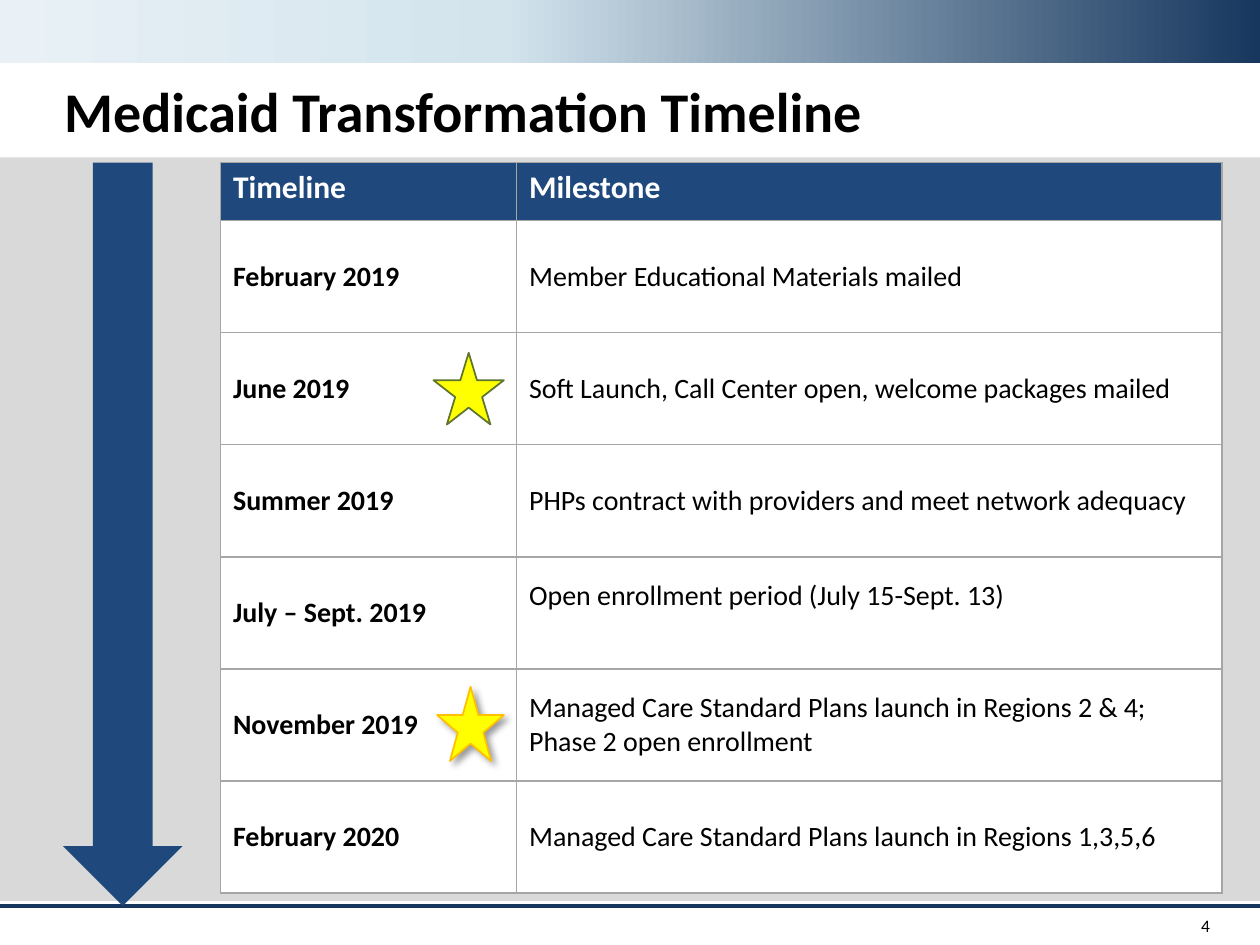
"""Build the Medicaid transformation timeline slide."""
from copy import deepcopy

from lxml.etree import SubElement
from pptx import Presentation
from pptx.dml.color import RGBColor
from pptx.enum.shapes import MSO_CONNECTOR, MSO_SHAPE
from pptx.enum.text import MSO_ANCHOR, MSO_AUTO_SIZE, PP_ALIGN
from pptx.oxml import parse_xml
from pptx.oxml.ns import nsdecls, qn
from pptx.util import Inches, Pt

COLORS = {
    "navy": "17375E", "blue": "1F497D", "gray": "D9D9D9", "rule": "A6A6A6",
    "white": "FFFFFF", "black": "000000", "yellow": "FFFF00",
    "olive": "5E752F", "gold": "FFC000", "sky": "D3E4ED", "pale": "E9F1F6",
}
ROWS = [
    ("Timeline", "Milestone"),
    ("February 2019", "Member Educational Materials mailed"),
    ("June 2019", "Soft Launch, Call Center open, welcome packages mailed"),
    ("Summer 2019", "PHPs contract with providers and meet network adequacy"),
    ("July – Sept. 2019", "Open enrollment period (July 15-Sept. 13)"),
    ("November 2019", "Managed Care Standard Plans launch in Regions 2 & 4; "
                      "Phase 2 open enrollment"),
    ("February 2020", "Managed Care Standard Plans launch in Regions 1,3,5,6"),
]


def color(name):
    return RGBColor.from_string(COLORS[name])


class Deck:
    def __init__(self, font):
        self.font = font
        self.prs = Presentation()
        self.prs.slide_width, self.prs.slide_height = Inches(10), Inches(7.5)
        self.slide = self.prs.slides.add_slide(self.prs.slide_layouts[5])
        self.shapes = self.slide.shapes

    def text(self, frame, words, size, tint="black", bold=False, align=PP_ALIGN.LEFT):
        para = frame.paragraphs[0]
        para.alignment = align
        run = para.add_run()
        run.text = words
        run.font.name, run.font.size, run.font.bold = self.font, Pt(size), bold
        run.font.color.rgb = color(tint)
        return para

    def title(self, words, box):
        shape = self.shapes.title
        shape.left, shape.top, shape.width, shape.height = map(Inches, box)
        frame = shape.text_frame
        frame.auto_size = MSO_AUTO_SIZE.NONE
        frame.vertical_anchor = MSO_ANCHOR.MIDDLE
        self.text(frame, words, 32, bold=True).line_spacing = 0.9

    def label(self, words, box):
        frame = self.shapes.add_textbox(*map(Inches, box)).text_frame
        frame.word_wrap = True
        frame.vertical_anchor = MSO_ANCHOR.MIDDLE
        self.text(frame, words, 10, align=PP_ALIGN.RIGHT)

    def shape(self, kind, box, fill, line=None):
        shape = self.shapes.add_shape(kind, *map(Inches, box))
        shape.shadow.inherit = False
        shape.fill.solid()
        shape.fill.fore_color.rgb = color(fill)
        if line:
            shape.line.color.rgb = color(line)
            shape.line.width = Pt(1)
        else:
            shape.line.fill.background()
        return shape

    def band(self, box, stops):
        shape = self.shape(MSO_SHAPE.RECTANGLE, box, "navy")
        fill = shape.fill
        fill.gradient()
        fill.gradient_angle = 180
        last = shape._element.spPr.find(".//" + qn("a:gsLst"))[-1]
        last.addnext(deepcopy(last))
        for stop, (spot, name) in zip(fill.gradient_stops, stops):
            stop.position = spot
            stop.color.rgb = color(name)

    def shade(self, shape):
        effects = shape._element.spPr.find(qn("a:effectLst"))
        effects.append(parse_xml(
            f'<a:outerShdw {nsdecls("a")} blurRad="{Pt(4)}" dist="{Pt(3)}" '
            f'dir="2700000" algn="tl" rotWithShape="0">'
            f'<a:srgbClr val="{COLORS["black"]}"><a:alpha val="40000"/></a:srgbClr>'
            f'</a:outerShdw>'))

    def line(self, start, end, tint, width):
        line = self.shapes.add_connector(
            MSO_CONNECTOR.STRAIGHT, *map(Inches, start + end))
        line.line.color.rgb = color(tint)
        line.line.width = Pt(width)
        SubElement(line._element.spPr, qn("a:effectLst"))

    def border(self, cell):
        props = cell._tc.get_or_add_tcPr()
        for spot, side in enumerate(("lnL", "lnR", "lnT", "lnB")):
            props.insert(spot, parse_xml(
                f'<a:{side} {nsdecls("a")} w="{Pt(1)}"><a:solidFill>'
                f'<a:srgbClr val="{COLORS["rule"]}"/></a:solidFill></a:{side}>'))

    def table(self, rows, box, widths, heights):
        table = self.shapes.add_table(
            len(rows), len(widths), *map(Inches, box)).table
        for col, width in zip(table.columns, widths):
            col.width = Inches(width)
        for row, height in zip(table.rows, heights):
            row.height = Inches(height)
        for r, row in enumerate(rows):
            for c, words in enumerate(row):
                cell, head = table.cell(r, c), r == 0
                cell.fill.solid()
                cell.fill.fore_color.rgb = color("blue" if head else "white")
                cell.vertical_anchor = MSO_ANCHOR.TOP if head else MSO_ANCHOR.MIDDLE
                self.text(cell.text_frame, words, 18 if head else 16,
                          "white" if head else "black", head or c == 0)
                self.border(cell)
        return table


def main():
    deck = Deck("Calibri")
    deck.band((0, 0, 10, 0.5), ((0, "navy"), (0.6, "sky"), (1, "pale")))
    deck.line((0, 7.19), (10, 7.19), "navy", 2.25)
    deck.shape(MSO_SHAPE.RECTANGLE, (0, 1.25, 10, 5.9), "gray")
    deck.label("4", (9.08, 7.19, 0.62, 0.31))
    deck.title("Medicaid Transformation Timeline", (0.41, 0.61, 9.12, 0.6))
    deck.shape(MSO_SHAPE.DOWN_ARROW, (0.5, 1.29, 0.95, 5.9), "blue")
    heights = [0.46] + [0.89] * (len(ROWS) - 1)
    table = deck.table(ROWS, (1.75, 1.29, 7.95, sum(heights)), (2.35, 5.6), heights)
    table.cell(4, 1).margin_bottom = Inches(0.32)
    deck.shape(MSO_SHAPE.STAR_5_POINT, (3.44, 2.8, 0.56, 0.57), "yellow", "olive")
    deck.shade(deck.shape(
        MSO_SHAPE.STAR_5_POINT, (3.47, 5.45, 0.53, 0.59), "yellow", "gold"))
    deck.prs.save("out.pptx")


if __name__ == "__main__":
    main()
